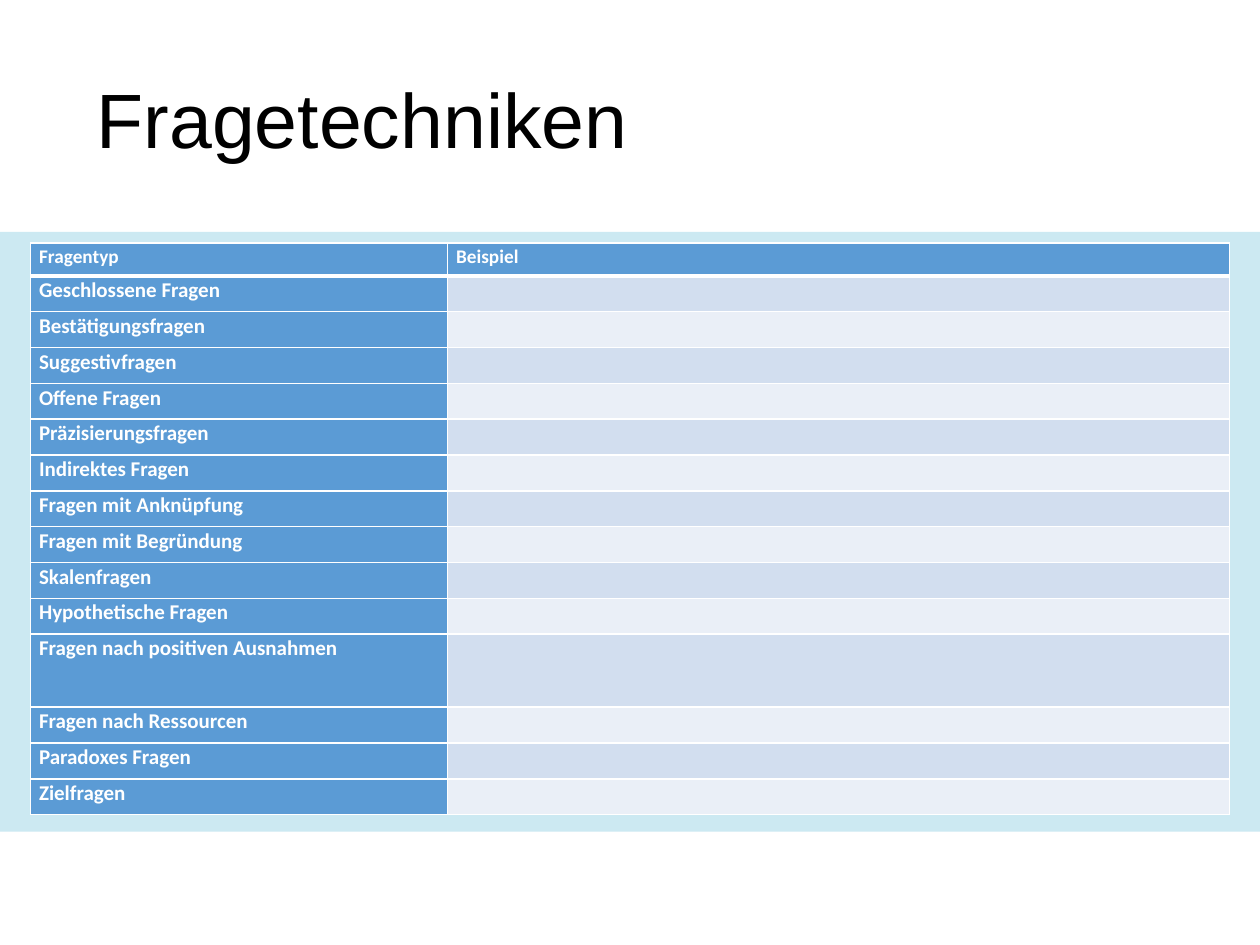
from lxml import etree
from pptx import Presentation
from pptx.dml.color import RGBColor
from pptx.enum.shapes import MSO_SHAPE
from pptx.enum.text import MSO_ANCHOR
from pptx.oxml.ns import qn
from pptx.util import Inches, Pt

RECTANGLE = MSO_SHAPE.RECTANGLE
MIDDLE = MSO_ANCHOR.MIDDLE

BLACK = RGBColor(0x00, 0x00, 0x00)
WHITE = RGBColor(0xFF, 0xFF, 0xFF)
BAND = RGBColor(0xCC, 0xE9, 0xF2)
BLUE = RGBColor(0x5B, 0x9B, 0xD5)
STRIPES = [RGBColor(0xD2, 0xDE, 0xEF), RGBColor(0xEA, 0xEF, 0xF7)]

TITLE = "Fragetechniken"
HEADINGS = ["Fragentyp", "Beispiel"]
TALL_QUESTION = "Fragen nach positiven Ausnahmen"
QUESTIONS = [
    "Geschlossene Fragen",
    "Bestätigungsfragen",
    "Suggestivfragen",
    "Offene Fragen",
    "Präzisierungsfragen",
    "Indirektes Fragen",
    "Fragen mit Anknüpfung",
    "Fragen mit Begründung",
    "Skalenfragen",
    "Hypothetische Fragen",
    TALL_QUESTION,
    "Fragen nach Ressourcen",
    "Paradoxes Fragen",
    "Zielfragen",
]

COLUMN_WIDTHS = [3.31, 6.21]
TABLE_HEIGHT = 4.54
HEADER_HEIGHT = 0.26
TALL_HEIGHT = 0.58
ROW_HEIGHT = (TABLE_HEIGHT - HEADER_HEIGHT - TALL_HEIGHT) / (len(QUESTIONS) - 1)


def write(frame, text, *, size, font, color, bold=False, line=1.0, after=0):
    para = frame.paragraphs[0]
    para.line_spacing = line
    para.space_after = Pt(after)
    if not text:
        etree.SubElement(para._p, qn("a:endParaRPr"), sz=str(size * 100))
        return
    span = para.add_run()
    span.text = text
    span.font.size = Pt(size)
    span.font.name = font
    span.font.bold = bold
    span.font.color.rgb = color


def set_borders(cell, top, bottom):
    properties = cell._tc.get_or_add_tcPr()
    for side, width in (("L", 1), ("R", 1), ("T", top), ("B", bottom)):
        border = etree.SubElement(properties, qn(f"a:ln{side}"), w=str(Pt(width)))
        fill = etree.SubElement(border, qn("a:solidFill"))
        etree.SubElement(fill, qn("a:srgbClr"), val=str(WHITE))


def fill_cell(cell, text, color, size, top=1, bottom=1):
    cell.margin_left = cell.margin_right = Inches(0.07)
    cell.margin_top = cell.margin_bottom = 0
    set_borders(cell, top, bottom)
    cell.fill.solid()
    cell.fill.fore_color.rgb = color
    write(cell.text_frame, text, size=size, font="Calibri", color=WHITE,
          bold=True, line=1.07, after=8)


deck = Presentation()
deck.slide_width = Inches(10)
deck.slide_height = Inches(7.5)
page = deck.slides.add_slide(deck.slide_layouts[6])

band = page.shapes.add_shape(RECTANGLE, 0, Inches(1.84), Inches(10), Inches(4.76))
band.shadow.inherit = False
band.fill.solid()
band.fill.fore_color.rgb = BAND
band.line.fill.background()

table = page.shapes.add_table(
    len(QUESTIONS) + 1, len(HEADINGS), Inches(0.24), Inches(1.93),
    Inches(sum(COLUMN_WIDTHS)), Inches(TABLE_HEIGHT)).table
for column, width in zip(table.columns, COLUMN_WIDTHS):
    column.width = Inches(width)

table.rows[0].height = Inches(HEADER_HEIGHT)
for column, heading in enumerate(HEADINGS):
    fill_cell(table.cell(0, column), heading, BLUE, 11, bottom=3)

for row, question in enumerate(QUESTIONS, start=1):
    height = TALL_HEIGHT if question == TALL_QUESTION else ROW_HEIGHT
    table.rows[row].height = Inches(height)
    top = 3 if row == 1 else 1
    fill_cell(table.cell(row, 0), question, BLUE, 12, top=top)
    fill_cell(table.cell(row, 1), "", STRIPES[(row - 1) % 2], 12, top=top)

title = page.shapes.add_textbox(Inches(0.67), Inches(0.25), Inches(8.66), Inches(1.46))
title.text_frame.word_wrap = True
title.text_frame.vertical_anchor = MIDDLE
write(title.text_frame, TITLE, size=44, font="Arial", color=BLACK, line=0.9)

deck.save("out.pptx")
